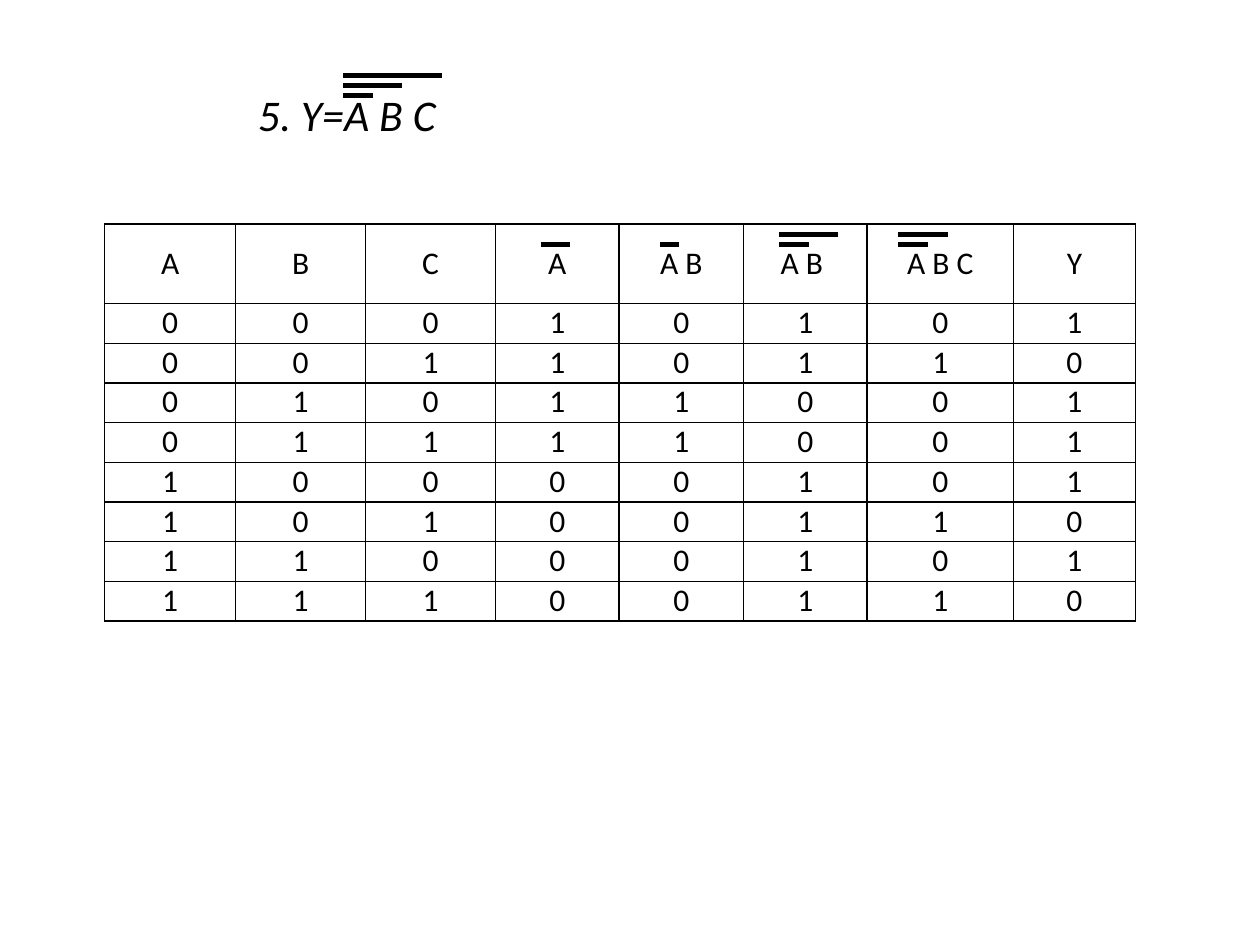
from itertools import product

from lxml.etree import SubElement
from pptx import Presentation
from pptx.dml.color import RGBColor
from pptx.enum.shapes import MSO_CONNECTOR
from pptx.enum.text import MSO_ANCHOR, PP_ALIGN
from pptx.oxml.ns import qn
from pptx.util import Cm, Pt

BLACK = RGBColor(0x00, 0x00, 0x00)

HEADINGS = ["A", "B", "C", "A", "A B", "A B ", "A B C", "Y"]
COLUMN_WIDTHS = [2.64, 2.62, 2.62, 2.49, 2.51, 2.49, 2.95, 2.46]
HEADING_HEIGHT, ROW_HEIGHT = 1.6, 0.8

# Negation bars: left, lowest height, lengths from the lowest bar upwards
NEGATIONS = [
    (6.91, 1.93, [0.6, 1.2, 2.0]),
    (10.9, 4.93, [0.6]),
    (13.31, 4.93, [0.38]),
    (15.7, 4.93, [0.6, 1.2]),
    (18.11, 4.93, [0.6, 1.0]),
]
BAR_STEP = 0.2


def truth_row(a, b, c):
    """Return the inputs, each intermediate term and Y for one case."""
    not_a = 1 - a
    product_ab = not_a & b
    negated_ab = 1 - product_ab
    product_abc = negated_ab & c
    return [a, b, c, not_a, product_ab, negated_ab, product_abc, 1 - product_abc]


class LogicSlide:
    font_name = "Calibri"
    title_size = Pt(25)
    table_size = Pt(18)
    border_width = Pt(1)
    bar_width = Pt(3)

    def __init__(self, slide):
        self.slide = slide

    def add_run(self, paragraph, text, size, italic=False):
        run = paragraph.add_run()
        run.text = text
        font = run.font
        font.name, font.size = self.font_name, size
        font.bold, font.italic = False, italic
        font.color.rgb = BLACK

    def add_title(self, text, left, top, width, height):
        title = self.slide.shapes.add_textbox(Cm(left), Cm(top), Cm(width), Cm(height))
        frame = title.text_frame
        frame.word_wrap = True
        frame.vertical_anchor = MSO_ANCHOR.MIDDLE
        self.add_run(frame.paragraphs[0], text, self.title_size, italic=True)

    def add_borders(self, cell):
        properties = cell._tc.get_or_add_tcPr()
        for side in ("lnL", "lnR", "lnT", "lnB"):
            border = SubElement(properties, qn(f"a:{side}"), w=str(self.border_width))
            fill = SubElement(border, qn("a:solidFill"))
            SubElement(fill, qn("a:srgbClr"), val=str(BLACK))

    def fill_cell(self, cell, text, anchor):
        cell.margin_left = cell.margin_right = Cm(0.18)
        cell.margin_top = cell.margin_bottom = 0
        cell.vertical_anchor = anchor
        self.add_borders(cell)
        cell.fill.background()
        paragraph = cell.text_frame.paragraphs[0]
        paragraph.alignment = PP_ALIGN.CENTER
        self.add_run(paragraph, text, self.table_size)

    def add_truth_table(self, headings, cases, left, top):
        height = HEADING_HEIGHT + ROW_HEIGHT * len(cases)
        table = self.slide.shapes.add_table(
            len(cases) + 1, len(headings),
            Cm(left), Cm(top), Cm(sum(COLUMN_WIDTHS)), Cm(height),
        ).table
        table.first_row = table.horz_banding = False
        for column, width in zip(table.columns, COLUMN_WIDTHS):
            column.width = Cm(width)
        for index, values in enumerate([headings, *cases]):
            is_heading = index == 0
            table.rows[index].height = Cm(HEADING_HEIGHT if is_heading else ROW_HEIGHT)
            anchor = MSO_ANCHOR.MIDDLE if is_heading else MSO_ANCHOR.TOP
            for cell, value in zip(table.rows[index].cells, values):
                self.fill_cell(cell, str(value), anchor)

    def add_bar(self, left, top, length):
        bar = self.slide.shapes.add_connector(
            MSO_CONNECTOR.STRAIGHT, Cm(left), Cm(top), Cm(left + length), Cm(top)
        )
        bar.line.color.rgb = BLACK
        bar.line.width = self.bar_width
        SubElement(bar._element.spPr, qn("a:effectLst"))

    def add_negation(self, left, lowest, lengths):
        for level, length in enumerate(lengths):
            self.add_bar(left, lowest - level * BAR_STEP, length)


def main():
    presentation = Presentation()
    presentation.slide_width, presentation.slide_height = Cm(25.4), Cm(19.05)
    blank = presentation.slide_layouts[6]
    logic = LogicSlide(presentation.slides.add_slide(blank))

    logic.add_title("5. Y=A B C", 4.95, 1.4, 19.25, 1.78)
    cases = [truth_row(*inputs) for inputs in product((0, 1), repeat=3)]
    logic.add_truth_table(HEADINGS, cases, 2.11, 4.52)
    for negation in NEGATIONS:
        logic.add_negation(*negation)

    presentation.save("out.pptx")


if __name__ == "__main__":
    main()
